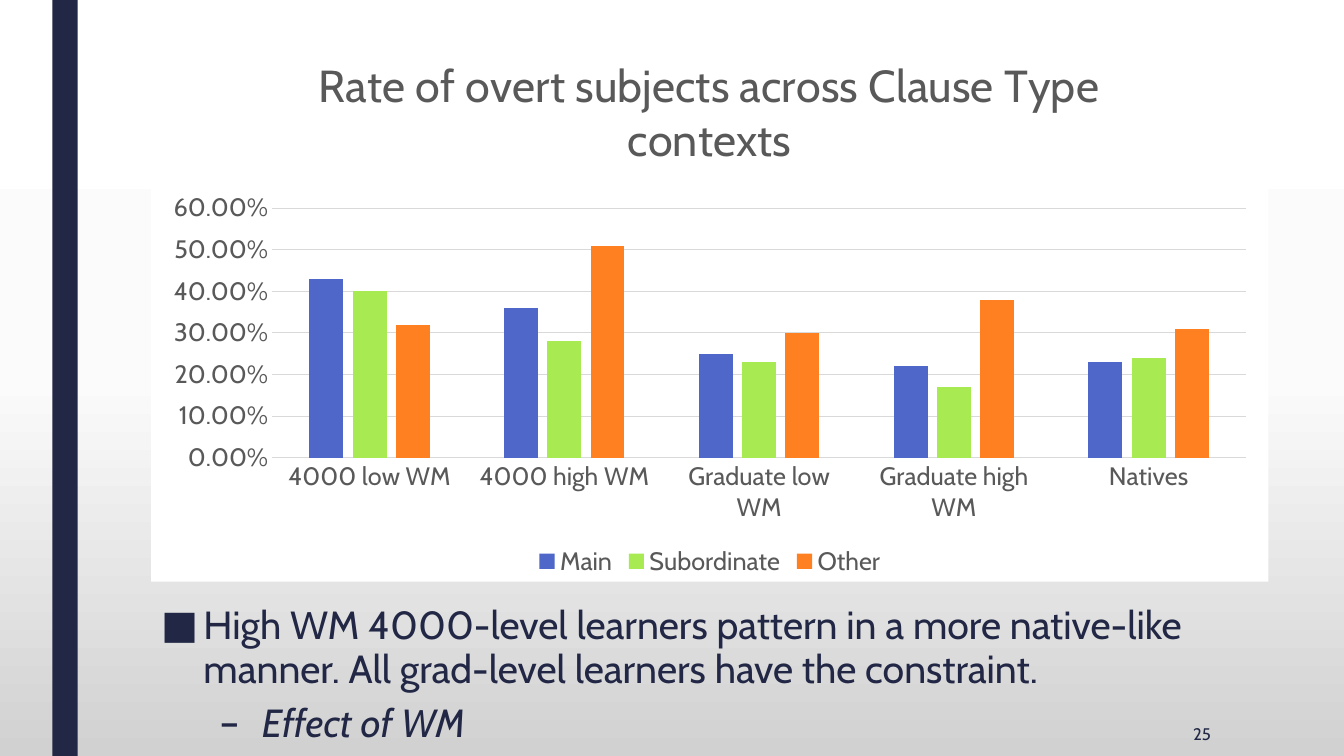
import pptx
import pptx.chart.data
import pptx.dml.color
import pptx.enum.chart
import pptx.enum.shapes
import pptx.enum.text
import pptx.oxml
import pptx.oxml.ns
import pptx.util

WIDTH, HEIGHT = 13.33, 7.5
FONT = "Cabin"
NAVY, GREY, RULE, WHITE = "212745", "595959", "D9D9D9", "FFFFFF"
BACKDROP = [(0, WHITE), (50, "FBFBFB"), (100, "D1D1D1")]
LEFT = 1.5

GROUPS = ["4000 low WM", "4000 high WM", "Graduate low WM", "Graduate high WM", "Natives"]
CLAUSES = [
    ("Main", "4E67C8", [0.43, 0.36, 0.25, 0.22, 0.23]),
    ("Subordinate", "A7EA52", [0.40, 0.28, 0.23, 0.17, 0.24]),
    ("Other", "FF8021", [0.32, 0.51, 0.30, 0.38, 0.31]),
]
FINDINGS = [
    # text, level, left margin, bullet, space before, italic
    ("High WM 4000-level learners pattern in a more native-like manner. "
     "All grad-level learners have the constraint.", 0, 0.42, "■", 10, False),
    ("Effect of WM", 1, 1, "–", 5, True),
]


def color(hex_string):
    return pptx.dml.color.RGBColor.from_string(hex_string)


def inches(*lengths):
    return [pptx.util.Inches(length) for length in lengths]


def element(tag, content="", attributes=""):
    return pptx.oxml.parse_xml(
        f'<{tag} {pptx.oxml.ns.nsdecls("a", "c")} {attributes}>{content}</{tag}>')


def solid(hex_string):
    return f'<a:solidFill><a:srgbClr val="{hex_string}"/></a:solidFill>'


def style(font, size, hex_string, italic=False):
    font.name, font.size = FONT, pptx.util.Pt(size)
    font.bold, font.italic = False, italic
    font.color.rgb = color(hex_string)


def paint_background(slide):
    fill = slide.background.fill
    fill.gradient()
    fill.gradient_angle = 270
    stops = slide.background._cSld.find(".//" + pptx.oxml.ns.qn("a:gsLst"))
    for stop in list(stops):
        stops.remove(stop)
    for share, shade in BACKDROP:
        stops.append(element("a:gs", f'<a:srgbClr val="{shade}"/>', f'pos="{share * 1000}"'))


def add_band(slide, box, shade):
    band = slide.shapes.add_shape(pptx.enum.shapes.MSO_SHAPE.RECTANGLE, *inches(*box))
    band.shadow.inherit = False
    band.fill.solid()
    band.fill.fore_color.rgb = color(shade)
    band.line.fill.background()


def style_axis(axis):
    axis.major_tick_mark = axis.minor_tick_mark = pptx.enum.chart.XL_TICK_MARK.NONE
    style(axis.tick_labels.font, 18, GREY)


def rule(line):
    line.color.rgb = color(RULE)
    line.width = pptx.util.Pt(0.75)


def add_rate_chart(slide, box, title):
    rates = pptx.chart.data.CategoryChartData(number_format="0.00%")
    rates.categories = GROUPS
    for clause, _, values in CLAUSES:
        rates.add_series(clause, values)
    chart = slide.shapes.add_chart(
        pptx.enum.chart.XL_CHART_TYPE.COLUMN_CLUSTERED, *inches(*box), rates).chart
    style(chart.font, 10, "000000")
    chart._chartSpace.chart.addnext(
        element("c:spPr", solid(WHITE) + "<a:ln><a:noFill/></a:ln>"))

    # Title and legend
    chart.has_title = True
    heading = chart.chart_title.text_frame
    heading.text = title
    style(heading.paragraphs[0].runs[0].font, 32, GREY)
    chart.chart_title.include_in_layout = False
    chart.has_legend = True
    chart.legend.position = pptx.enum.chart.XL_LEGEND_POSITION.BOTTOM
    chart.legend.include_in_layout = False
    style(chart.legend.font, 18, GREY)

    # Axes
    style_axis(chart.category_axis)
    rule(chart.category_axis.format.line)
    rate_axis = chart.value_axis
    style_axis(rate_axis)
    rate_axis.minimum_scale, rate_axis.maximum_scale, rate_axis.major_unit = 0, 0.6, 0.1
    rate_axis.format.line.fill.background()
    rate_axis.tick_labels.number_format = "0.00%"
    rate_axis.tick_labels.number_format_is_linked = False
    rule(rate_axis.major_gridlines.format.line)

    # Columns
    plot = chart.plots[0]
    plot.vary_by_categories = False
    plot.gap_width, plot.overlap = 219, -27
    for series, (_, shade, _) in zip(plot.series, CLAUSES):
        series.format.fill.solid()
        series.format.fill.fore_color.rgb = color(shade)


def add_text_frame(slide, box):
    frame = slide.shapes.add_textbox(*inches(*box)).text_frame
    frame.word_wrap = True
    return frame


def add_findings(slide, box):
    frame = add_text_frame(slide, box)
    frame.text = "\n".join(finding[0] for finding in FINDINGS)
    for paragraph, (_, level, margin, bullet, before, italic) in zip(frame.paragraphs, FINDINGS):
        paragraph.level = level
        paragraph.line_spacing = 0.94
        paragraph.space_before = pptx.util.Pt(before)
        paragraph.space_after = pptx.util.Pt(2)
        properties = paragraph._p.get_or_add_pPr()
        properties.set("marL", str(pptx.util.Inches(margin)))
        properties.set("indent", str(pptx.util.Inches(-0.42)))
        properties.append(element("a:buFont", attributes=f'typeface="{FONT}"'))
        properties.append(element("a:buChar", attributes=f'char="{bullet}"'))
        style(paragraph.runs[0].font, 28, NAVY, italic)


def add_page_number(slide, box, number):
    frame = add_text_frame(slide, box)
    frame.vertical_anchor = pptx.enum.text.MSO_ANCHOR.MIDDLE
    frame.text = number
    frame.paragraphs[0].alignment = pptx.enum.text.PP_ALIGN.RIGHT
    style(frame.paragraphs[0].runs[0].font, 12, NAVY)


def main():
    deck = pptx.Presentation()
    deck.slide_width, deck.slide_height = inches(WIDTH, HEIGHT)
    slide = deck.slides.add_slide(deck.slide_layouts[6])
    paint_background(slide)
    add_band(slide, (0.52, 0, 0.25, HEIGHT), NAVY)
    add_rate_chart(slide, (LEFT, 0.29, 11.08, 5.48),
                   "Rate of overt subjects across Clause Type contexts")
    add_findings(slide, (LEFT, 5.94, 10.5, 1.39))
    add_page_number(slide, (10.36, 7.06, 1.75, 0.44), "25")
    deck.save("out.pptx")


if __name__ == "__main__":
    main()
